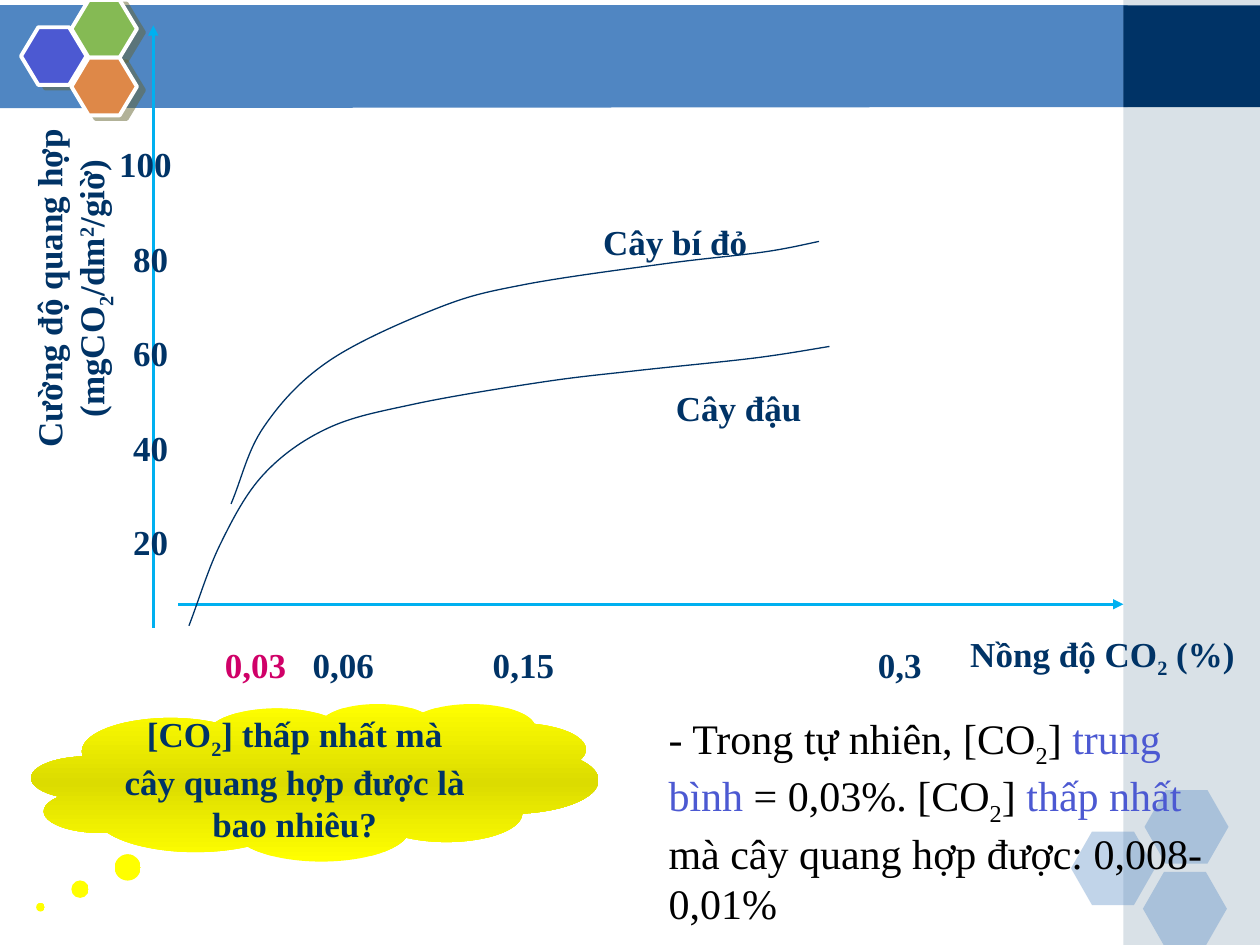
import copy

import pptx
import pptx.dml.color
import pptx.enum.shapes
import pptx.enum.text
import pptx.oxml
import pptx.oxml.ns
import pptx.util

COLUMNS, ROWS = 120, 90
UNIT = pptx.util.Inches(10) // COLUMNS
NAVY, SKY, BLUE, VIOLET, BLACK = "003366", "00B0F0", "5086C2", "4C59D2", "000000"
SHAPE = pptx.enum.shapes.MSO_SHAPE
CENTER = pptx.enum.text.PP_ALIGN.CENTER
LEFT = pptx.enum.text.PP_ALIGN.LEFT
LABEL = {"name": "Times New Roman", "size": pptx.util.Pt(20), "bold": True}
ANSWER = {"name": "Times New Roman", "size": pptx.util.Pt(24), "bold": False}
SUB, SUPER = -25000, 30000
LABEL_HEIGHT = 5.2


def rgb(code):
    """Turn a hex string into a colour."""
    return pptx.dml.color.RGBColor.from_string(code)


def grid(*cells):
    """Turn grid columns and rows into lengths."""
    return [pptx.util.Emu(round(cell * UNIT)) for cell in cells]


def add_xml(parent, body):
    """Append a drawing element given as text."""
    head, rest = body.split(" ", 1)
    declared = f"{head} {pptx.oxml.ns.nsdecls('a')} {rest}"
    parent.append(pptx.oxml.parse_xml(declared))


def paint(block, fill):
    """Give a shape a flat fill without outline or shadow."""
    block.shadow.inherit = False
    block.line.fill.background()
    block.fill.solid()
    block.fill.fore_color.rgb = rgb(fill)


def add_block(shapes, kind, box, fill, alpha=None, adjust=()):
    """Add a flat preset shape without outline."""
    block = shapes.add_shape(kind, *grid(*box))
    paint(block, fill)
    for index, value in enumerate(adjust):
        block.adjustments[index] = value
    if alpha:
        color = block._element.spPr.find(".//" + pptx.oxml.ns.qn("a:srgbClr"))
        add_xml(color, f'<a:alpha val="{alpha * 1000}"/>')
    return block


def add_emblem_cell(shapes, left, top, fill):
    """Add one white-edged hexagon with an offset shadow."""
    cell = add_block(shapes, SHAPE.HEXAGON, (left, top, 6.24, 5.5), fill, adjust=[0.3])
    cell.line.color.rgb = rgb("FFFFFF")
    cell.line.width = pptx.util.Pt(2.25)
    effects = cell._element.spPr.find(pptx.oxml.ns.qn("a:effectLst"))
    add_xml(effects, '<a:outerShdw dist="57150" dir="1620000" algn="ctr" rotWithShape="0">'
                     '<a:srgbClr val="666633"><a:alpha val="50000"/></a:srgbClr></a:outerShdw>')


def write(frame, runs, style, align=CENTER, color=NAVY):
    """Fill a text frame with runs of text, colour and baseline."""
    frame.word_wrap = True
    paragraph = frame.paragraphs[0]
    paragraph.alignment = align
    for wording, *change in runs:
        run = paragraph.add_run()
        run.text = wording
        for attribute, value in style.items():
            setattr(run.font, attribute, value)
        tint = next((item for item in change if isinstance(item, str)), color)
        run.font.color.rgb = rgb(tint)
        for baseline in (item for item in change if isinstance(item, int)):
            run.font._element.set("baseline", str(baseline))


def add_text(shapes, box, runs, style=LABEL, rotation=0, **options):
    """Add a wrapped text box with half a line before its paragraph."""
    label = shapes.add_textbox(*grid(*box))
    label.rotation = rotation
    frame = label.text_frame
    write(frame, runs, style, **options)
    add_xml(frame.paragraphs[0]._p.get_or_add_pPr(),
            '<a:spcBef ><a:spcPct val="50000"/></a:spcBef>')
    frame.auto_size = pptx.enum.text.MSO_AUTO_SIZE.SHAPE_TO_FIT_TEXT


def add_axis(shapes, start, end):
    """Add an arrow along one axis."""
    axis = shapes.add_connector(
        pptx.enum.shapes.MSO_CONNECTOR.STRAIGHT, *grid(*start, *end))
    axis.line.color.rgb = rgb(SKY)
    axis.line.width = pptx.util.Pt(1.5)
    add_xml(axis.line._get_or_add_ln(), '<a:tailEnd type="triangle"/>')
    add_xml(axis._element.spPr, "<a:effectLst />")


def add_outline(shapes, corners, close):
    """Add a freeform through the given grid points."""
    first, *others = [grid(*corner) for corner in corners]
    builder = shapes.build_freeform(*first, scale=1.0)
    builder.add_line_segments(others, close=close)
    return builder.convert_to_shape()


def bend(outline):
    """Turn the straight segments of an outline into smooth cubic ones."""
    qn = pptx.oxml.ns.qn
    track = outline._element.spPr.find(".//" + qn("a:path"))
    knots = [(int(pt.get("x")), int(pt.get("y"))) for pt in track.iter(qn("a:pt"))]
    for segment in track.findall(qn("a:lnTo")):
        track.remove(segment)
    lead = tuple(2 * a - b for a, b in zip(knots[0], knots[1]))
    padded = [lead, *knots, knots[-1]]
    for before, start, end, after in zip(padded, padded[1:], padded[2:], padded[3:]):
        leaving = [s + (e - b) / 6 for b, s, e in zip(before, start, end)]
        arriving = [e - (a - s) / 6 for s, e, a in zip(start, end, after)]
        points = "".join(f'<a:pt x="{round(x)}" y="{round(y)}"/>'
                         for x, y in (leaving, arriving, end))
        add_xml(track, f"<a:cubicBezTo >{points}</a:cubicBezTo>")


def add_curve(shapes, knots):
    """Draw a smooth open curve through the knots."""
    curve = add_outline(shapes, knots, close=False)
    bend(curve)
    curve.shadow.inherit = False
    curve.fill.background()
    curve.line.color.rgb = rgb(NAVY)
    curve.line.width = pptx.util.Pt(0.75)


def add_question(shapes, box, runs):
    """Add the cloud with a yellow gradient and the question."""
    cloud = add_block(shapes, SHAPE.CLOUD_CALLOUT, box, "FFFF00", adjust=[-0.484, 0.793])
    cloud.fill.gradient()
    cloud.fill.gradient_angle = 90
    stops = cloud._element.spPr.find(".//" + pptx.oxml.ns.qn("a:gsLst"))
    stops.insert(1, copy.deepcopy(stops[0]))
    shades = [(0, "FFFF00"), (0.5, "DCDC00"), (1, "FFFF00")]
    for stop, (position, shade) in zip(cloud.fill.gradient_stops, shades):
        stop.position = position
        stop.color.rgb = rgb(shade)
    cloud.text_frame.vertical_anchor = pptx.enum.text.MSO_ANCHOR.MIDDLE
    write(cloud.text_frame, runs, LABEL)


def add_backdrop(shapes):
    """Add the header band, side strip and hexagons."""
    band = [(-0.1, 0.5), (107.4, 0.5), (107.4, 10.2), (-0.1, 10.3)]
    paint(add_outline(shapes, band, close=True), BLUE)
    add_block(shapes, SHAPE.RECTANGLE, (107, 0, 13, ROWS), "A0B5C4", alpha=40)
    add_block(shapes, SHAPE.RECTANGLE, (107, 0.5, 13, 9.7), NAVY)
    for left, top in [(102, 79.2), (109, 75.25), (108.85, 83.05)]:
        add_block(shapes, SHAPE.HEXAGON, (left, top, 8, 7), BLUE, alpha=35, adjust=[0.286])
    emblem = shapes.add_group_shape().shapes
    for left, top, fill in [(2, 2.6, VIOLET), (6.8, 0, "85BA54"), (6.8, 5.5, "DE8848")]:
        add_emblem_cell(emblem, left, top, fill)


def add_graph(shapes):
    """Add the axes, their labels and both plant curves."""
    add_axis(shapes, (14.6, 59.8), (14.6, 2.4))
    add_axis(shapes, (17, 57.55), (107, 57.55))
    add_text(shapes, (90, 59.6, 30, LABEL_HEIGHT), [("Nồng độ CO",), ("2", SUB), (" (%)",)])
    add_text(shapes, (-11.85, 22.85, 37, 9.25),
             [("Cường độ quang hợp (mgCO",), ("2", SUB), ("/dm",), ("2", SUPER), ("/giờ)",)],
             rotation=270)
    for index, rate in enumerate(range(20, 101, 20)):
        left, width = (10, 7.7) if rate == 100 else (11, 6.7)
        add_text(shapes, (left, 49 - 9 * index, width, LABEL_HEIGHT), [(str(rate),)])
    for left, width, level, color in [(20, 8.7, "0,03", "D00068"), (27.35, 10.7, "0,06", NAVY),
                                      (45, 9.7, "0,15", NAVY), (82.35, 6.7, "0,3", NAVY)]:
        add_text(shapes, (left, 60.7, width, LABEL_HEIGHT), [(level, color)])
    add_text(shapes, (61, 36.2, 18.7, LABEL_HEIGHT), [("Cây đậu",)])
    add_text(shapes, (54, 20.4, 20.6, LABEL_HEIGHT), [("Cây bí đỏ",)])
    pumpkin = [(22, 48), (25.1, 40.7), (31.3, 34.4), (41.8, 29.3),
               (50, 27.1), (63.5, 25.1), (72.8, 24), (78, 23)]
    bean = [(18, 59.6), (21, 51.8), (25.1, 45.2), (31.2, 40.8), (39.4, 38.5),
            (51.6, 36.4), (60.7, 35.3), (71.9, 34.1), (79, 33)]
    for knots in (pumpkin, bean):
        add_curve(shapes, knots)


def main():
    """Build the slide and save it."""
    deck = pptx.Presentation()
    deck.slide_width, deck.slide_height = grid(COLUMNS, ROWS)
    shapes = deck.slides.add_slide(deck.slide_layouts[6]).shapes
    add_backdrop(shapes)
    add_graph(shapes.add_group_shape().shapes)
    add_question(shapes, (3, 67, 54, 15), [
        ("[CO",), ("2", SUB), ("] thấp nhất mà cây quang hợp được là bao nhiêu?",)])
    add_text(shapes, (62.5, 67.25, 55, 20.6), [
        ("- Trong tự nhiên, [CO",), ("2", SUB), ("] ",), ("trung bình", VIOLET),
        (" = 0,03%. [CO",), ("2", SUB), ("] ",), ("thấp nhất", VIOLET),
        (" mà cây quang hợp được: 0,008- 0,01%",)], ANSWER, align=LEFT, color=BLACK)
    deck.save("out.pptx")


if __name__ == "__main__":
    main()
